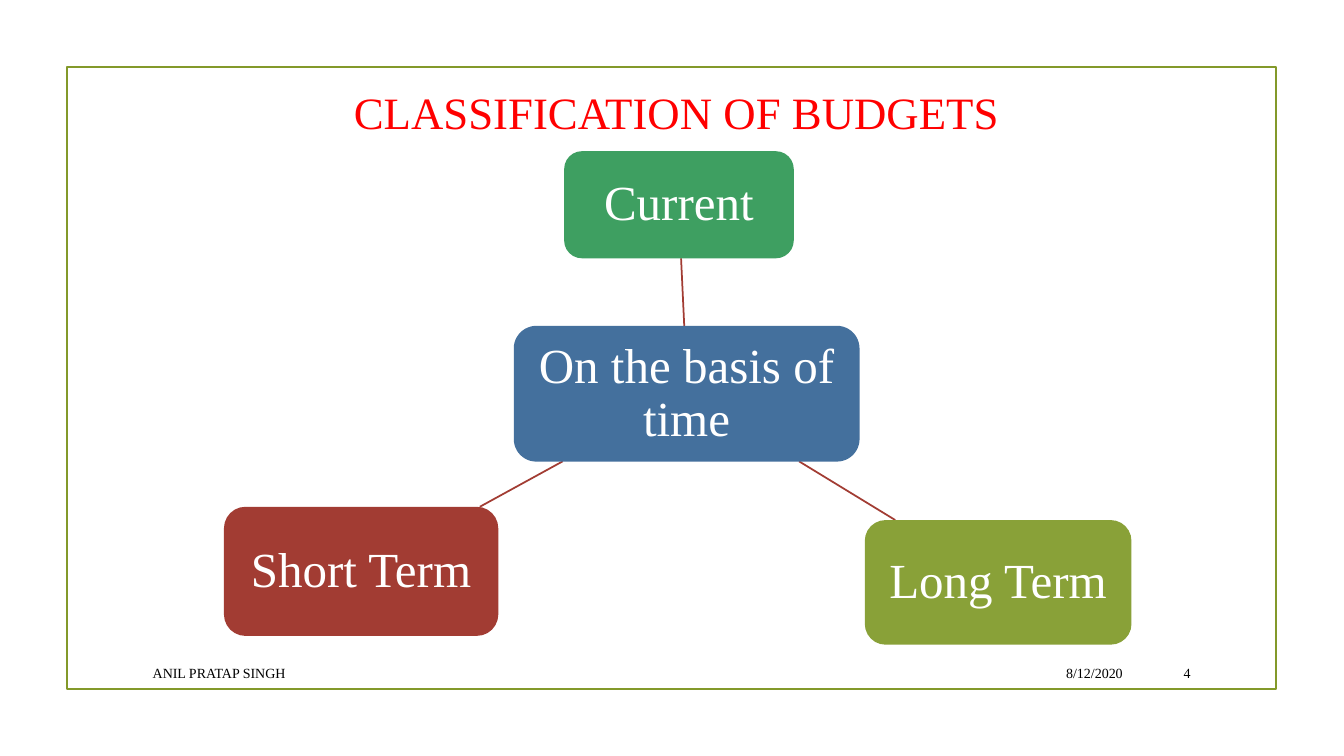
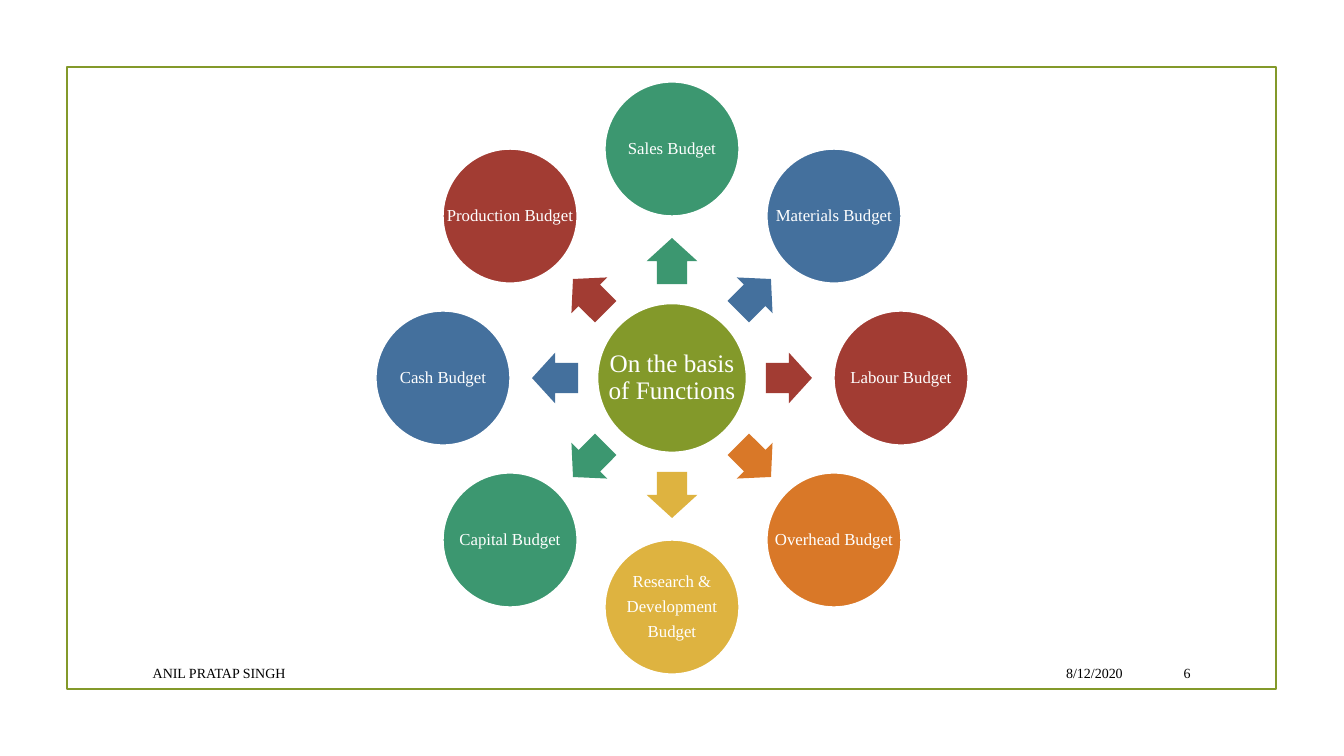
import math
import pptx
import pptx.util
import pptx.dml.color
import pptx.enum.shapes
import pptx.enum.text
import lxml.etree

Pt = pptx.util.Pt
SHAPE = pptx.enum.shapes.MSO_SHAPE
ALIGN = pptx.enum.text.PP_ALIGN
ANCHOR = pptx.enum.text.MSO_ANCHOR
FONT = "Times New Roman"
OLIVE, BLUE, RED, TEAL = "83992A", "44709D", "A23C33", "3C9770"
ORANGE, GOLD, GREEN, LIME = "D97828", "DEB340", "3E9F61", "89A138"
WHITE, BLACK, TITLE_RED = "FFFFFF", "000000", "FF0000"


def paint(target, color):
    if hasattr(target, "solid"):
        target.solid()
        target.fore_color.rgb = pptx.dml.color.RGBColor.from_string(color)
    else:
        target.color.rgb = pptx.dml.color.RGBColor.from_string(color)


def write(shape, text, size, color, align, anchor, inset=None, wrap=True, spacing=None):
    frame = shape.text_frame
    frame.text = text
    frame.word_wrap = wrap
    frame.vertical_anchor = anchor
    if inset is not None:
        frame.margin_left = frame.margin_right = Pt(inset)
        frame.margin_top = frame.margin_bottom = Pt(inset)
    for paragraph in frame.paragraphs:
        paragraph.alignment = align
        if spacing:
            paragraph.line_spacing = spacing
            paragraph.space_after = Pt(size * 0.4)
        for run in paragraph.runs:
            run.font.name = FONT
            run.font.size = Pt(size)
            paint(run.font, color)


deck = pptx.Presentation()
deck.slide_width, deck.slide_height = Pt(960), Pt(540)
time_slide = deck.slides.add_slide(deck.slide_layouts[5])
function_slide = deck.slides.add_slide(deck.slide_layouts[6])

for slide, number in [(time_slide, "4"), (function_slide, "6")]:
    border = slide.shapes.add_shape(SHAPE.RECTANGLE, Pt(47.7), Pt(48), Pt(864), Pt(444))
    border.shadow.inherit = False
    border.fill.background()
    paint(border.line, OLIVE)
    border.line.width = Pt(1.25)
    for text, left, width, align in [
        ("8/12/2020", 683, 126, ALIGN.RIGHT),
        ("ANIL PRATAP SINGH", 102, 575, ALIGN.LEFT),
        (number, 815, 42.5, ALIGN.RIGHT),
    ]:
        footer = slide.shapes.add_textbox(Pt(left), Pt(470), Pt(width), Pt(22))
        write(footer, text, 10, BLACK, align, ANCHOR.MIDDLE)

title = time_slide.shapes.title
title.left, title.top, title.width, title.height = Pt(245.5), Pt(57), Pt(478), Pt(46)
write(title, "CLASSIFICATION OF BUDGETS", 32, TITLE_RED, ALIGN.LEFT, ANCHOR.TOP, wrap=False)
title.text_frame.auto_size = pptx.enum.text.MSO_AUTO_SIZE.NONE

for start_x, start_y, end_x, end_y in [
    (488.75, 232.75, 486.5, 184.5),
    (570.75, 329.5, 639.5, 371.5),
    (402, 329.5, 342.75, 362),
]:
    link = time_slide.shapes.add_connector(
        pptx.enum.shapes.MSO_CONNECTOR.STRAIGHT, Pt(start_x), Pt(start_y), Pt(end_x), Pt(end_y))
    paint(link.line, RED)
    link.line.width = Pt(1.25)
    properties = link.element.find(pptx.oxml.ns.qn("p:spPr"))
    lxml.etree.SubElement(properties, pptx.oxml.ns.qn("a:effectLst"))

for text, left, top, width, height, color in [
    ("On the basis of time", 367, 232.75, 247, 97, BLUE),
    ("Current", 403, 108, 164, 76.5, GREEN),
    ("Long Term", 617.75, 371.5, 190.5, 89, LIME),
    ("Short Term", 160, 362, 196, 92.25, RED),
]:
    period = time_slide.shapes.add_shape(
        SHAPE.ROUNDED_RECTANGLE, Pt(left), Pt(top), Pt(width), Pt(height))
    period.shadow.inherit = False
    paint(period.fill, color)
    period.line.fill.background()
    write(period, text, 35, WHITE, ALIGN.CENTER, ANCHOR.MIDDLE, inset=7, spacing=0.9)

center_x, center_y = 480, 270
budget_radius, arrow_radius = 163.6, 83.5
arrow_length, arrow_breadth = 33, 36.2
circles = [("On the basis\vof Functions", center_x, center_y, 106.5, 18, OLIVE)]
budgets = [
    ("Sales Budget", TEAL),
    ("Materials Budget", BLUE),
    ("Labour Budget", RED),
    ("Overhead Budget", ORANGE),
    ("Research &\nDevelopment\nBudget", GOLD),
    ("Capital Budget", TEAL),
    ("Cash Budget", BLUE),
    ("Production Budget", RED),
]
for index, (text, color) in enumerate(budgets):
    degrees = index * 360 / len(budgets) - 90
    across, down = math.cos(math.radians(degrees)), math.sin(math.radians(degrees))
    arrow = function_slide.shapes.add_shape(
        SHAPE.RIGHT_ARROW,
        Pt(center_x + arrow_radius * across - arrow_length / 2),
        Pt(center_y + arrow_radius * down - arrow_breadth / 2),
        Pt(arrow_length), Pt(arrow_breadth))
    arrow.adjustments[0], arrow.adjustments[1] = 0.6, 0.5
    arrow.rotation = degrees % 360
    arrow.shadow.inherit = False
    paint(arrow.fill, color)
    arrow.line.fill.background()
    circles.append((text, center_x + budget_radius * across,
                    center_y + budget_radius * down, 96, 12, color))

for text, x, y, diameter, size, color in circles:
    circle = function_slide.shapes.add_shape(
        SHAPE.OVAL, Pt(x - diameter / 2), Pt(y - diameter / 2), Pt(diameter), Pt(diameter))
    circle.shadow.inherit = False
    paint(circle.fill, color)
    paint(circle.line, WHITE)
    circle.line.width = Pt(1.25)
    write(circle, text, size, WHITE, ALIGN.CENTER, ANCHOR.MIDDLE, inset=2, wrap=False, spacing=0.9)

deck.save("out.pptx")
